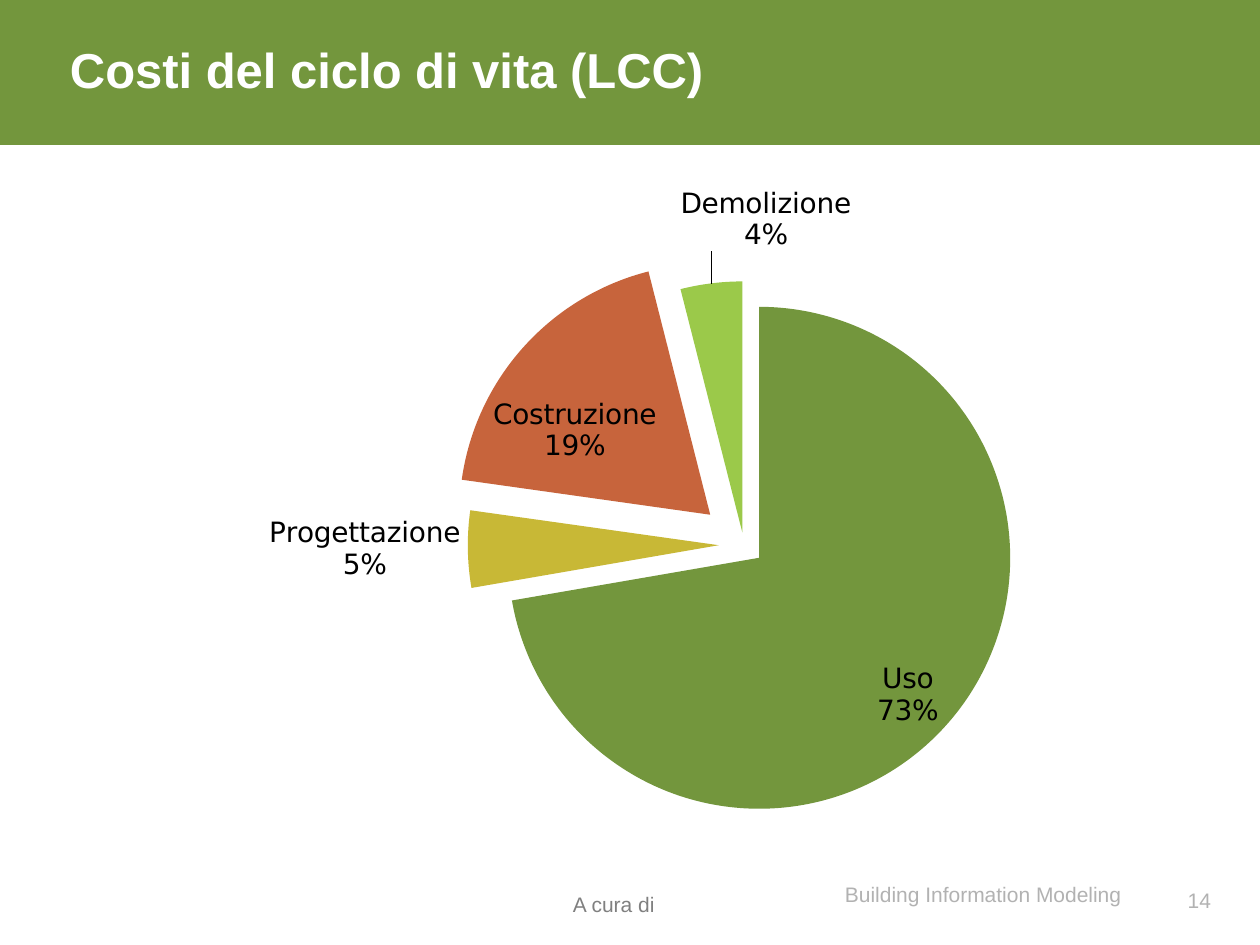
from lxml import etree
from pptx import Presentation
from pptx.chart.data import CategoryChartData
from pptx.dml.color import RGBColor
from pptx.enum.chart import XL_CHART_TYPE, XL_LABEL_POSITION
from pptx.enum.shapes import MSO_SHAPE
from pptx.enum.text import MSO_ANCHOR, PP_ALIGN
from pptx.oxml.ns import qn
from pptx.util import Pt

PIE = XL_CHART_TYPE.PIE
IN_END = XL_LABEL_POSITION.INSIDE_END
OUT_END = XL_LABEL_POSITION.OUTSIDE_END
CENTER = XL_LABEL_POSITION.CENTER
LEFT, RIGHT = PP_ALIGN.LEFT, PP_ALIGN.RIGHT
MIDDLE = MSO_ANCHOR.MIDDLE
RECT = MSO_SHAPE.RECTANGLE
PX = 914400 // 126

# Content
TITLE = "Costi del ciclo di vita (LCC)"
# name, percent, color, explosion, label place, label shift in px
COSTS = [
    ("Uso", 73, "green", 8, IN_END, (-7, 12)),
    ("Progettazione", 5, "gold", 10, OUT_END, None),
    ("Costruzione", 19, "rust", 18, CENTER, (-42, 0)),
    ("Demolizione", 4, "lime", 5, OUT_END, (141, -25)),
]
# text, box, insets, color, alignment
NOTES = [
    ("A cura di", (573, 876, 277, 50), (0, 6, 13, 0), "gray", LEFT),
    ("Building Information Modeling", (845, 866, 306, 50), (0, 6, 13, 0), "pale", LEFT),
    ("14", (1152, 875, 72, 50), (13, 6, 13, 6), "pale", RIGHT),
]
BAND = (0, 0, 1260, 145)
HEAD = (57, 39, 1134, 60)
CHART = (84, 179, 1132, 680)
PLOT = (493, 294, 502, 502)

THEME = {
    "font": "Arial", "chart font": "DejaVu Sans",
    "title": 28, "note": 12, "label": 16,
    "green": "73963D", "gold": "C8B836", "rust": "C7643C", "lime": "9BC94A",
    "gray": "808080", "pale": "B2B2B2", "white": "FFFFFF", "black": "000000",
}


def emu(box):
    return [n * PX for n in box]


def color(name):
    return RGBColor.from_string(THEME[name])


def style(font, face, size, tint, bold=False):
    font.name, font.size, font.bold = THEME[face], Pt(THEME[size]), bold
    font.color.rgb = color(tint)


def write(shape, text, pads, size, tint, align=LEFT, bold=False):
    frame = shape.text_frame
    frame.text = text
    frame.word_wrap = True
    frame.vertical_anchor = MIDDLE
    (frame.margin_left, frame.margin_top,
     frame.margin_right, frame.margin_bottom) = emu(pads)
    para = frame.paragraphs[0]
    para.alignment = align
    style(para.runs[0].font, "font", size, tint, bold)


def node(tag, val=None):
    item = etree.Element(qn("c:" + tag))
    if val is not None:
        item.set("val", str(val))
    return item


def layout(**vals):
    outer = node("layout")
    inner = node("manualLayout")
    outer.append(inner)
    for tag, val in vals.items():
        inner.append(node(tag, val))
    return outer


prs = Presentation()
prs.slide_width, prs.slide_height = emu((1260, 945))
slide = prs.slides.add_slide(prs.slide_layouts[5])
shapes = slide.shapes

# Header
title = shapes.title
title.left, title.top, title.width, title.height = emu(HEAD)
write(title, TITLE, (13, 0, 13, 0), "title", "white", bold=True)
band = shapes.add_shape(RECT, *emu(BAND))
band.shadow.inherit = False
band.fill.solid()
band.fill.fore_color.rgb = color("green")
band.line.fill.background()
title.element.addprevious(band.element)

# Footer
for text, box, pads, tint, align in NOTES:
    write(shapes.add_textbox(*emu(box)), text, pads, "note", tint, align)

# Pie
data = CategoryChartData(number_format="0")
data.categories = [cost[0] for cost in COSTS]
data.add_series("Series 1", [cost[1] for cost in COSTS])
chart = shapes.add_chart(PIE, *emu(CHART), data).chart
chart.has_legend = chart.has_title = False
style(chart.font, "chart font", "label", "black")
plot = chart.plots[0]
plot.vary_by_categories = True
series = plot.series[0]
left, top, wide, high = CHART

labels = series.data_labels
labels.show_percentage = labels.show_category_name = True
labels.show_value = False
labels.show_leader_lines = True
labels.number_format, labels.number_format_is_linked = "0%", False

# Slices
for i, (name, share, tint, burst, place, shift) in enumerate(COSTS):
    point = series.points[i]
    point.format.fill.solid()
    point.format.fill.fore_color.rgb = color(tint)
    slot = chart.element.xpath(f".//c:dPt[c:idx/@val='{i}']/c:spPr")[0]
    slot.addprevious(node("explosion", burst))

    label = point.data_label
    label.position = place
    if i == 0:  # the rounded shares add up to 101, so this one is typed
        label.text_frame.text = f"{name}\n{share}%"
        for para in label.text_frame.paragraphs:
            style(para.runs[0].font, "chart font", "label", "black")
    item = chart.element.xpath(f".//c:dLbl[c:idx/@val='{i}']")[0]
    for tag, val in (("showVal", 0), ("showCatName", 1), ("showPercent", 1)):
        item.find(qn("c:" + tag)).set("val", str(val))
    gap = node("separator")
    gap.text = "\n"
    item.append(gap)
    if shift:
        item.find(qn("c:idx")).addnext(
            layout(x=shift[0] / wide, y=shift[1] / high))

# Plot area
area = chart.element.xpath(".//c:plotArea")[0]
for old in area.findall(qn("c:layout")):
    area.remove(old)
area.insert(0, layout(
    layoutTarget="inner", xMode="edge", yMode="edge",
    x=(PLOT[0] - left) / wide, y=(PLOT[1] - top) / high,
    w=PLOT[2] / wide, h=PLOT[3] / high))

prs.save("out.pptx")
